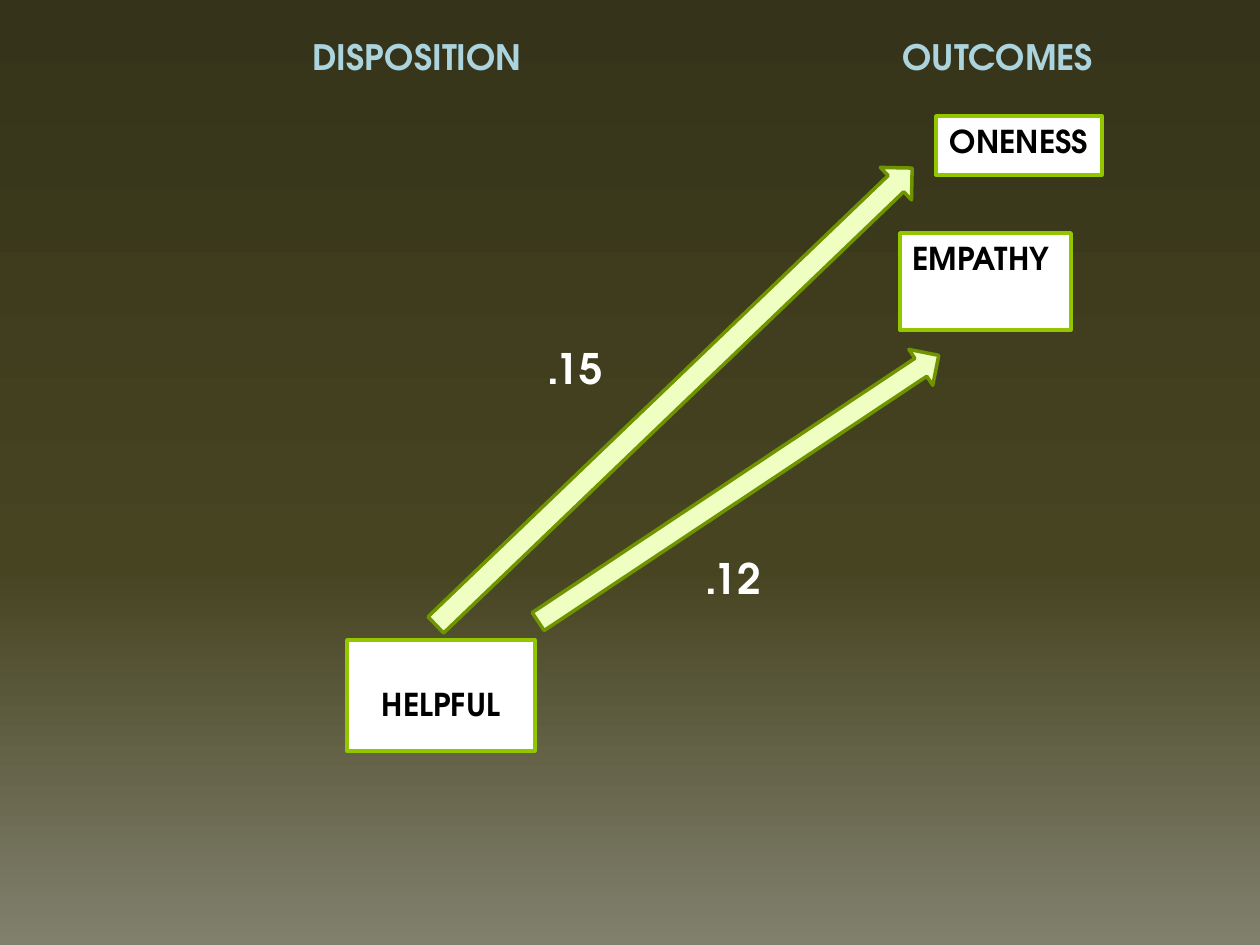
from copy import deepcopy

from lxml.etree import SubElement
from pptx import Presentation
from pptx.dml.color import RGBColor
from pptx.enum.shapes import MSO_SHAPE
from pptx.enum.text import MSO_ANCHOR, PP_ALIGN
from pptx.oxml.ns import qn
from pptx.util import Pt

PX = 914400 / 126
FONT = "TeX Gyre Adventor"
WHITE = RGBColor(0xFF, 0xFF, 0xFF)
BLACK = RGBColor(0x00, 0x00, 0x00)
HEADING = RGBColor(0xAC, 0xD4, 0xDE)
BOX_LINE = RGBColor(0x94, 0xC6, 0x00)
ARROW_FILL = RGBColor(0xEF, 0xFF, 0xC1)
ARROW_LINE = RGBColor(0x6F, 0x94, 0x00)
BACKGROUND = [
    (0, RGBColor(0x35, 0x33, 0x19)),
    (0.6, RGBColor(0x46, 0x44, 0x21)),
    (1, RGBColor(0x81, 0x80, 0x6D)),
]


def px(n):
    """Turn pixels into EMU."""
    return round(n * PX)


def paint_background(s):
    """Fill the slide with a three-stop vertical gradient."""
    fill = s.background.fill
    fill.gradient()
    fill.gradient_angle = 270
    stops = s.background._cSld.find(".//" + qn("a:gsLst"))
    stops.append(deepcopy(stops[-1]))
    for stop, (position, color) in zip(fill.gradient_stops, BACKGROUND):
        stop.position = position
        stop.color.rgb = color


def write(sp, text, size, color, align=PP_ALIGN.LEFT, after=0):
    """Put one bold line of text in a shape and return its paragraph."""
    tf = sp.text_frame
    tf.word_wrap = True
    tf.vertical_anchor = MSO_ANCHOR.TOP
    p = tf.paragraphs[0]
    p.alignment = align
    p.space_after = Pt(after)
    r = p.add_run()
    r.text = text
    for name, value in dict(name=FONT, size=Pt(size), bold=True).items():
        setattr(r.font, name, value)
    r.font.color.rgb = color
    return p


def add_label(s, box, text, size, color):
    """Add a text box and return its paragraph."""
    return write(s.shapes.add_textbox(*map(px, box)), text, size, color)


def add_headings(s, box, columns):
    """Add column headings on one line, each at its own tab stop."""
    text = "".join("\t" + name for name, _ in columns)
    p = add_label(s, box, text, 20, HEADING)
    tabs = SubElement(p._p.get_or_add_pPr(), qn("a:tabLst"))
    for _, offset in columns:
        SubElement(tabs, qn("a:tab"), pos=str(px(offset)), algn="l")


def add_outlined(s, kind, box, fill, line):
    """Add a flat filled shape with a two-point outline."""
    sp = s.shapes.add_shape(kind, *map(px, box))
    sp.shadow.inherit = False
    sp.fill.solid()
    sp.fill.fore_color.rgb = fill
    sp.line.color.rgb = line
    sp.line.width = Pt(2)
    return sp


def add_variable(s, box, text, align=PP_ALIGN.CENTER, top=6):
    """Add a white box naming a variable."""
    sp = add_outlined(s, MSO_SHAPE.RECTANGLE, box, WHITE, BOX_LINE)
    sp.text_frame.margin_top = px(top)
    write(sp, text, 18, BLACK, align, 10)


def add_effect(s, box, rotation, label_box, value):
    """Add a turned block arrow and its coefficient."""
    sp = add_outlined(s, MSO_SHAPE.RIGHT_ARROW, box, ARROW_FILL, ARROW_LINE)
    sp.rotation = rotation
    add_label(s, label_box, value, 24, WHITE)


def main():
    """Build the path diagram."""
    prs = Presentation()
    prs.slide_width, prs.slide_height = px(1260), px(945)
    s = prs.slides.add_slide(prs.slide_layouts[6])
    paint_background(s)
    add_headings(s, (10, 29, 1207, 55), [("DISPOSITION", 290), ("OUTCOMES", 880)])
    add_variable(s, (900, 233, 171, 97), "EMPATHY", PP_ALIGN.LEFT)
    add_variable(s, (936, 116, 166, 59), "ONENESS")
    add_variable(s, (347, 640, 188, 111), "HELPFUL", top=45)
    add_effect(s, (498, 467, 481, 43), 326.4, (693, 546, 136, 63), ".12")
    add_effect(s, (344, 374, 660, 45), 316.2, (535, 336, 136, 63), ".15")
    prs.save("out.pptx")


if __name__ == "__main__":
    main()
